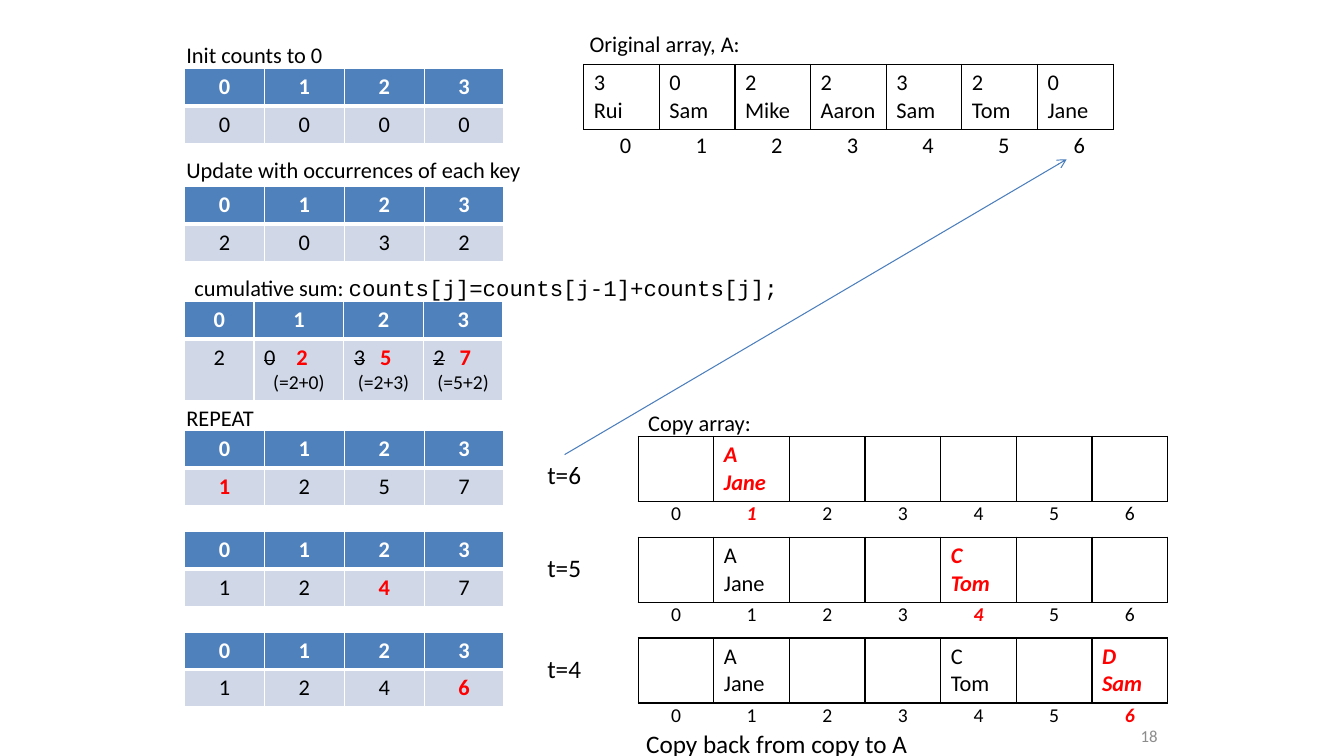
from pptx import Presentation, util as u
from pptx.dml.color import RGBColor
from pptx.enum import shapes, text
from pptx.oxml import parse_xml
from pptx.oxml.ns import nsdecls

INK = {"text": "000000", "new": "FF0000", "head": "4F81BD", "body": "D0D8E8",
       "white": "FFFFFF", "arrow": "4B7EBC", "page": "8C8C8C"}
PLAIN = "{2D5ABB26-0587-4C30-8999-92F81FD0307C}"
LEFT, MID, RIGHT = 1.83, 5.33, 6.33   # column edges
WIDE, CELL = 3.17, 0.75               # count table width, array cell width
NEW = dict(ink="new", bold=True)
HOT = dict(ink="new", bold=True, slant=True)

deck = Presentation()
deck.slide_width, deck.slide_height = u.Inches(13.33), u.Inches(7.5)
page = deck.slides.add_slide(deck.slide_layouts[6])


def write(frame, lines, size=16, side="LEFT", ink="text", bold=False, slant=False):
    """Each line is a string or a list of (words, style) runs."""
    for n, line in enumerate(lines):
        para = frame.paragraphs[0] if n == 0 else frame.add_paragraph()
        para.alignment = getattr(text.PP_ALIGN, side)
        for words, style in [(line, {})] if isinstance(line, str) else line:
            run = para.add_run()
            run.text = words
            font = run.font
            font.name = style.get("face", "Calibri")
            font.size = u.Pt(size)
            font.bold = style.get("bold", bold)
            font.italic = slant
            font.color.rgb = RGBColor.from_string(INK[style.get("ink", ink)])
            if style.get("strike"):
                font._element.set("strike", "sngStrike")


def grid(x, y, wide, high, rows, cols, line=None):
    """Add an unstyled table; line names the colour of its cell edges."""
    shape = page.shapes.add_table(rows, cols, *map(u.Inches, (x, y, wide, high)))
    table = shape.table
    table.first_row = table.horz_banding = False
    for mark in shape.element.iter("{*}tableStyleId"):
        mark.text = PLAIN
    for r in range(rows):
        for c in range(cols):
            cell = table.cell(r, c)
            for edge in "LRTB" if line else "":
                thick = rows == 2 and (r, edge) in ((0, "B"), (1, "T"))
                cell._tc.get_or_add_tcPr().append(parse_xml(
                    f'<a:ln{edge} {nsdecls("a")} w="{u.Pt(3 if thick else 1)}"><a:solidFill>'
                    f'<a:srgbClr val="{INK[line]}"/></a:solidFill></a:ln{edge}>'))
            if rows == 2:
                cell.fill.solid()
                cell.fill.fore_color.rgb = RGBColor.from_string(INK["body" if r else "head"])
            else:
                cell.fill.background()
    return table


# Count tables: top, values, column of the new value
counts = [(0.68, "0000", None), (1.85, "2032", None), (2.99, "2", None),
          (4.27, "1257", 0), (5.27, "1247", 2), (6.27, "1246", 3)]
for top, vals, new in counts:
    table = grid(LEFT, top, WIDE, 0.73, 2, 4, "white")
    for c in range(4):
        write(table.cell(0, c).text_frame, [str(c)], side="CENTER", ink="white", bold=True)
    for c, val in enumerate(vals):
        write(table.cell(1, c).text_frame, [val], side="CENTER", **(NEW if c == new else {}))
    if len(vals) == 1:
        # Cumulative sums: old value struck out, new one after a tab
        for c, wide in enumerate((0.69, 0.89, 0.79, 0.79)):
            table.columns[c].width = u.Inches(wide)
        table.rows[0].height, table.rows[1].height = u.Inches(0.37), u.Inches(0.6)
        sums = [("0", "2", "(=2+0)", 0.32), ("3", "5", "(=2+3)", 0.26), ("2", "7", "(=5+2)", 0.26)]
        for c, (old, val, why, tab) in enumerate(sums, 1):
            frame = table.cell(1, c).text_frame
            write(frame, [[(old, {"strike": True}), ("\t", {}), (val, NEW)]])
            frame.paragraphs[0]._p.get_or_add_pPr().append(parse_xml(
                f'<a:tabLst {nsdecls("a")}><a:tab pos="{u.Inches(tab)}" algn="l"/></a:tabLst>'))
            para = frame.add_paragraph()
            para.alignment = text.PP_ALIGN.CENTER
            run = para.add_run()
            run.text = why
            run.font.name, run.font.size = "Calibri", u.Pt(14)

# Source array with its indexes
names = ["3 Rui", "0 Sam", "2 Mike", "2 Aaron", "3 Sam", "2 Tom", "0 Jane"]
array = grid(5.79, 0.64, 7 * CELL, 0.63, 1, 7, "text")
index = grid(5.83, 1.26, 7 * CELL, 0.41, 1, 7)
for c, name in enumerate(names):
    write(array.cell(0, c).text_frame, name.split())
    write(index.cell(0, c).text_frame, [str(c)], side="CENTER")

# Copy array, one step per row: slot filled, content
done = {}
for step, (slot, name) in enumerate([(1, "A Jane"), (4, "C Tom"), (6, "D Sam")]):
    done[slot] = name
    array = grid(RIGHT, 4.33 + step, 7 * CELL, 0.63, 1, 7, "text")
    index = grid(RIGHT, 4.93 + step, 7 * CELL, 0.33 if step == 2 else 0.41, 1, 7)
    for c in range(7):
        look = HOT if c == slot else {}
        if c in done:
            write(array.cell(0, c).text_frame, done[c].split(), **look)
        write(index.cell(0, c).text_frame, [str(c)], size=14, side="CENTER", **look)

# Captions: left, top, width, size, line
code = [("cumulative sum: ", {}), ("counts[j]=counts[j-1]+counts[j];", {"face": "Courier New"})]
notes = [(1.75, 0.36, 1.57, 16, "Init counts to 0"),
         (1.75, 1.5, 3.61, 16, "Update with occurrences of each key"),
         (LEFT, 2.67, 6.12, 16, code),
         (1.75, 3.96, 0.88, 16, "REPEAT"),
         (5.75, 0.25, 1.71, 16, "Original array, A:"),
         (RIGHT, 4.01, 1.28, 16, "Copy array:"),
         (MID, 4.51, 0.54, 18, "t=6"),
         (MID, 5.43, 0.54, 18, "t=5"),
         (MID, 6.43, 0.54, 18, "t=4"),
         (6.31, 7.18, 2.82, 18, "Copy back from copy to A")]
for x, y, wide, size, line in notes:
    box = page.shapes.add_textbox(*map(u.Inches, (x, y, wide, 0.4 if size == 18 else 0.37)))
    box.text_frame.word_wrap = False
    box.text_frame.auto_size = text.MSO_AUTO_SIZE.SHAPE_TO_FIT_TEXT
    write(box.text_frame, [line], size)

# Arrow from t=6 to the last item
arrow = page.shapes.add_connector(shapes.MSO_CONNECTOR.STRAIGHT,
                                  *map(u.Inches, (5.6, 4.51, 10.58, 1.58)))
arrow.line.color.rgb = RGBColor.from_string(INK["arrow"])
arrow.line.width = u.Pt(0.75)
arrow.line._get_or_add_ln().append(parse_xml(f'<a:tailEnd {nsdecls("a")} type="arrow"/>'))
arrow._element.spPr.append(parse_xml(f'<a:effectLst {nsdecls("a")}/>'))

# Page number
box = page.shapes.add_textbox(*map(u.Inches, (9.25, 7.1, 2.33, 0.4)))
box.text_frame.word_wrap = True
box.text_frame.vertical_anchor = text.MSO_ANCHOR.MIDDLE
write(box.text_frame, ["18"], 12, "RIGHT", "page")

deck.save("out.pptx")
